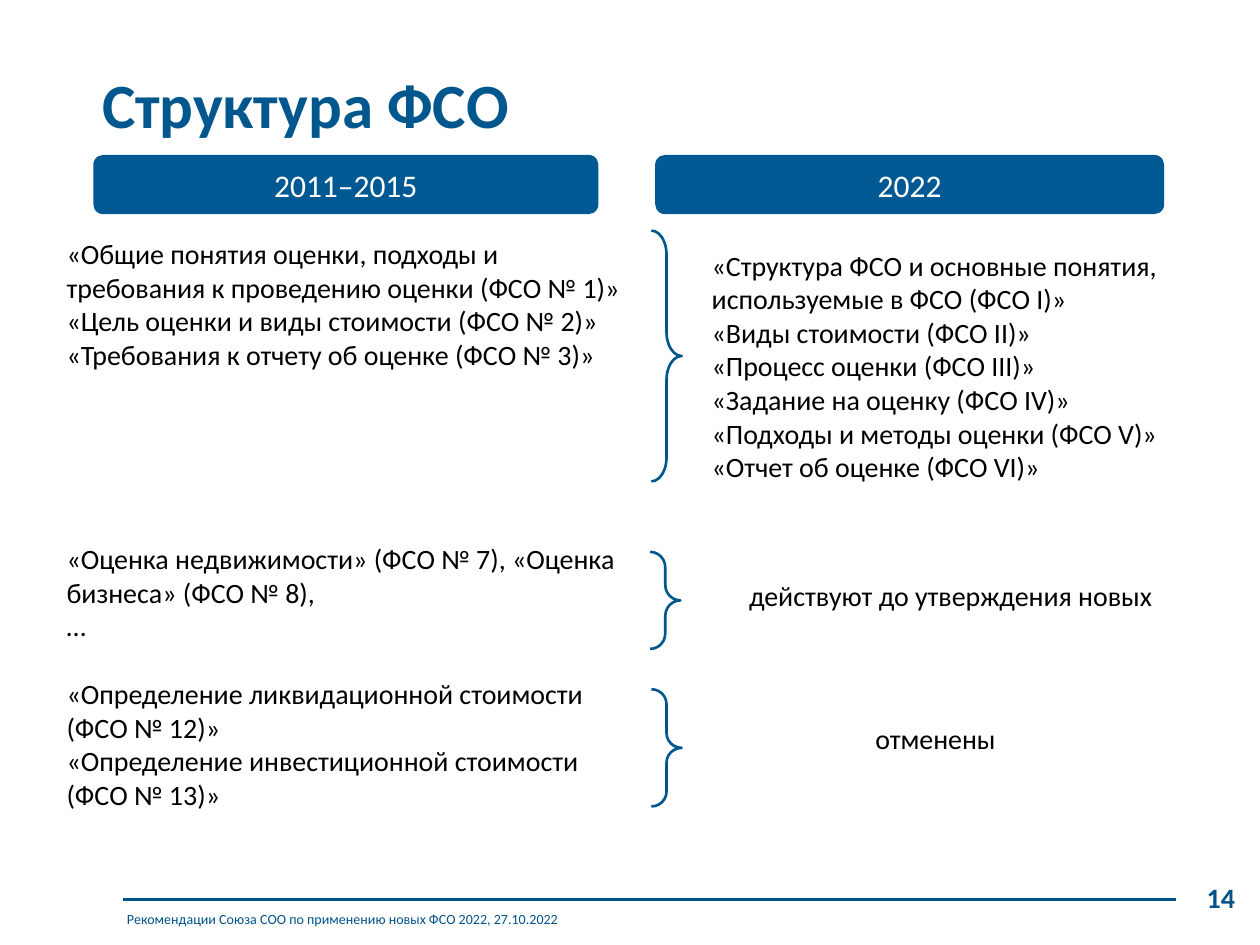
from lxml.etree import SubElement
from pptx import Presentation
from pptx.dml.color import RGBColor
from pptx.enum.shapes import MSO_CONNECTOR, MSO_SHAPE
from pptx.enum.text import MSO_ANCHOR, MSO_AUTO_SIZE, PP_ALIGN
from pptx.oxml.ns import qn
from pptx.util import Inches, Pt

COLORS = {"title": "00578E", "bar": "005992", "footer": "015289",
          "body": "000000", "bar_text": "FFFFFF"}
FONT = "Calibri"
COLUMNS, ROWS = 100, 75
SLIDE_WIDTH, SLIDE_HEIGHT = Inches(10), Inches(7.5)
BODY_SIZE = 16
BODY_LINE = 19.5  # height of one body line in points

OLD_STANDARDS = [
    ["«Общие понятия оценки, подходы и требования к проведению оценки (ФСО № 1)»",
     "«Цель оценки и виды стоимости (ФСО № 2)»",
     "«Требования к отчету об оценке (ФСО № 3)»"],
    ["«Оценка недвижимости» (ФСО № 7), «Оценка бизнеса» (ФСО № 8),",
     "…"],
    ["«Определение ликвидационной стоимости (ФСО № 12)»",
     "«Определение инвестиционной стоимости (ФСО № 13)»"],
]
OLD_GAPS = [0, 5, 1]  # body lines left free above each group
NEW_STANDARDS = [
    "«Структура ФСО и основные понятия, используемые в ФСО (ФСО I)»",
    "«Виды стоимости (ФСО II)»",
    "«Процесс оценки (ФСО III)»",
    "«Задание на оценку (ФСО IV)»",
    "«Подходы и методы оценки (ФСО V)»",
    "«Отчет об оценке (ФСО VI)»",
]
PERIODS = [("2011–2015", 7.4, 40.1), ("2022", 52, 40.4)]
BRACES = [(51.7, 18.3, 19.9, 0.79), (51.6, 43.8, 7.7, 0.51), (51.7, 54.7, 9.3, 0.49)]
OUTCOMES = [("действуют до утверждения новых", 53.9, 45.4), ("отменены", 52.7, 56.8)]


def rgb(role):
    return RGBColor.from_string(COLORS[role])


def grid(column, row, columns, rows):
    """Turn grid cells into left, top, width and height."""
    return (round(SLIDE_WIDTH * column / COLUMNS), round(SLIDE_HEIGHT * row / ROWS),
            round(SLIDE_WIDTH * columns / COLUMNS), round(SLIDE_HEIGHT * rows / ROWS))


def write(frame, lines, size, role, align=PP_ALIGN.LEFT, bold=False):
    """Write one paragraph for each pair of text and space before."""
    for number, (text, gap) in enumerate(lines):
        paragraph = frame.paragraphs[0] if number == 0 else frame.add_paragraph()
        paragraph.alignment = align
        if gap:
            paragraph.space_before = Pt(gap)
        run = paragraph.add_run()
        run.text = text
        run.font.name = FONT
        run.font.size = Pt(size)
        run.font.bold = bold
        run.font.color.rgb = rgb(role)


def add_text(slide, area, lines, size=BODY_SIZE, role="body", **style):
    frame = slide.shapes.add_textbox(*grid(*area)).text_frame
    frame.word_wrap = True
    write(frame, lines, size, role, **style)


def add_title(slide, text):
    title = slide.shapes.title
    title.left, title.top, title.width, title.height = grid(7.1, 4.7, 37, 7.7)
    frame = title.text_frame
    frame.auto_size = MSO_AUTO_SIZE.NONE
    frame.vertical_anchor = MSO_ANCHOR.TOP
    write(frame, [(text, 0)], 36, "title", bold=True)


def add_period_bar(slide, period, column, columns):
    bar = slide.shapes.add_shape(MSO_SHAPE.ROUNDED_RECTANGLE,
                                 *grid(column, 12.3, columns, 4.7))
    bar.shadow.inherit = False
    bar.fill.solid()
    bar.fill.fore_color.rgb = rgb("bar")
    bar.line.fill.background()
    bar.text_frame.vertical_anchor = MSO_ANCHOR.MIDDLE
    write(bar.text_frame, [(period, 0)], 18, "bar_text", align=PP_ALIGN.CENTER)


def add_brace(slide, column, row, rows, curve):
    brace = slide.shapes.add_shape(MSO_SHAPE.LEFT_BRACE, *grid(column, row, 2.4, rows))
    brace.rotation = 180
    brace.adjustments[0] = curve
    brace.shadow.inherit = False
    brace.fill.background()
    brace.line.color.rgb = rgb("title")
    brace.line.width = Pt(1.5)


def add_footer(slide, note, page):
    left, top, width, _ = grid(9.8, 71.4, 83.5, 0)
    rule = slide.shapes.add_connector(MSO_CONNECTOR.STRAIGHT, left, top, left + width, top)
    rule.line.color.rgb = rgb("footer")
    rule.line.width = Pt(1.5)
    SubElement(rule.element.spPr, qn("a:effectLst"))
    add_text(slide, (9.1, 71.8, 83.4, 2.4), [(note, 0)], 8, "footer")
    add_text(slide, (72.8, 69.4, 26.2, 3.7), [(page, 0)], 16, "footer",
             align=PP_ALIGN.RIGHT, bold=True)


def main():
    deck = Presentation()
    deck.slide_width, deck.slide_height = SLIDE_WIDTH, SLIDE_HEIGHT
    slide = deck.slides.add_slide(deck.slide_layouts[5])

    add_footer(slide, "Рекомендации Союза СОО по применению новых ФСО 2022, 27.10.2022", "14")
    add_title(slide, "Структура ФСО")
    for period in PERIODS:
        add_period_bar(slide, *period)

    old_lines = [(standard, 0 if index else gap * BODY_LINE)
                 for group, gap in zip(OLD_STANDARDS, OLD_GAPS)
                 for index, standard in enumerate(group)]
    add_text(slide, (4.3, 18.3, 47.1, 46.8), old_lines)
    add_text(slide, (55.5, 19.2, 41.8, 19.9), [(standard, 0) for standard in NEW_STANDARDS])
    for outcome, column, row in OUTCOMES:
        add_text(slide, (column, row, 43.1, 3.7), [(outcome, 0)], align=PP_ALIGN.CENTER)
    for brace in BRACES:
        add_brace(slide, *brace)

    deck.save("out.pptx")


if __name__ == "__main__":
    main()
